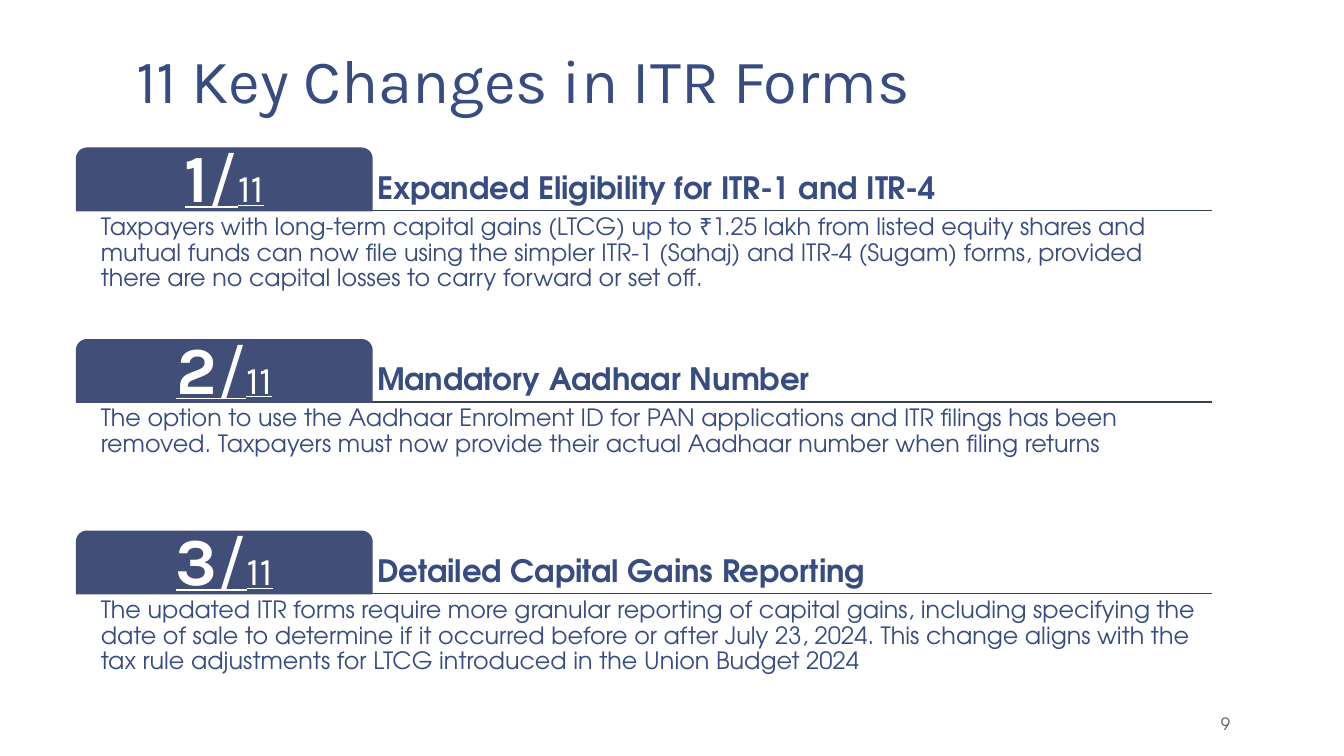
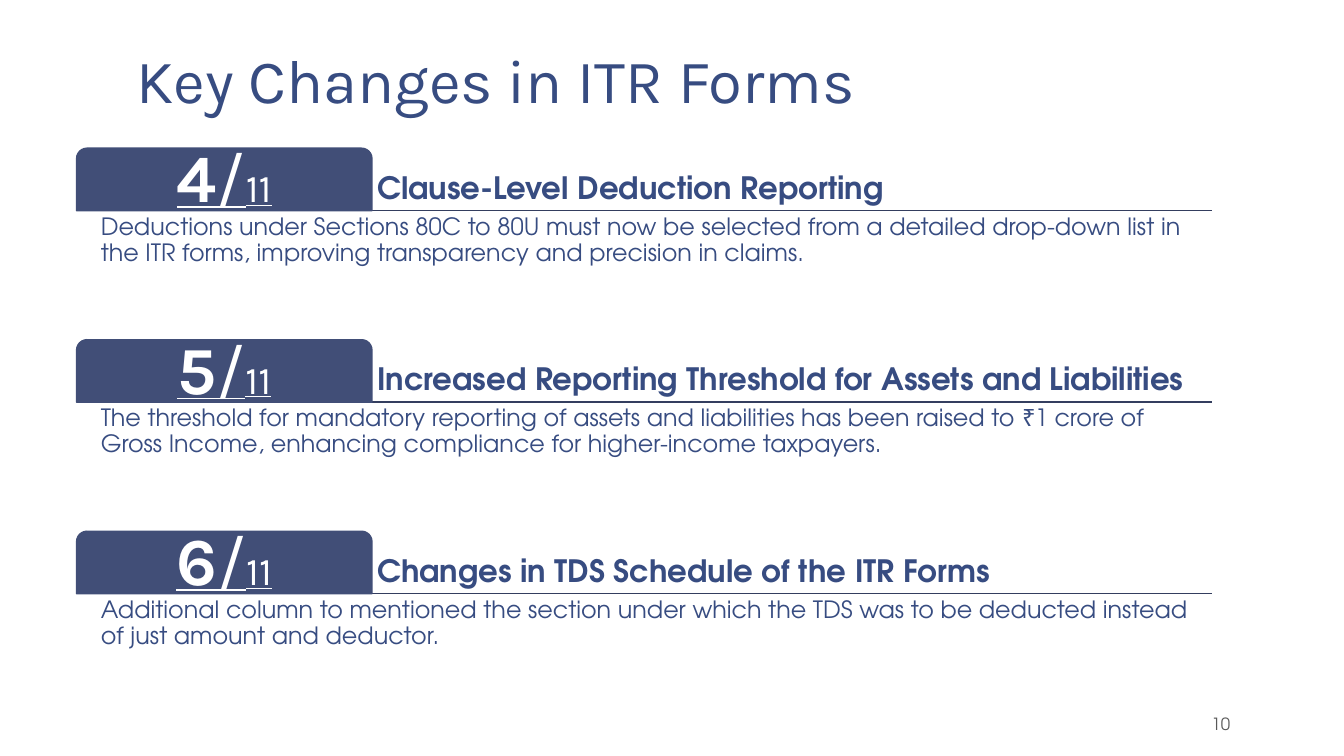
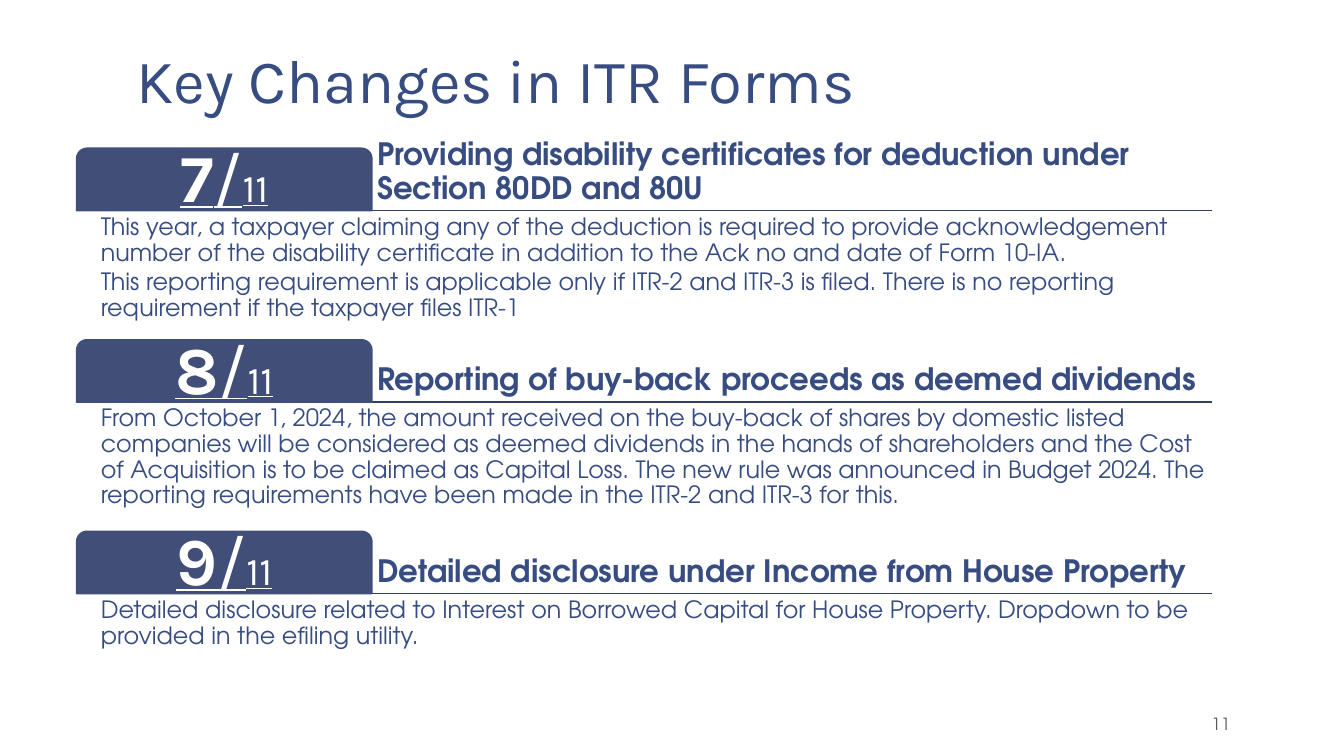
"""Build three slides listing key changes in the ITR forms."""
from dataclasses import dataclass

import pptx
import pptx.dml.color
import pptx.enum.shapes
import pptx.enum.text
import pptx.oxml.ns
import pptx.util
from lxml import etree
from pptx.util import Inches

RGBColor = pptx.dml.color.RGBColor
Align = pptx.enum.text.PP_ALIGN
Anchor = pptx.enum.text.MSO_ANCHOR

INK = RGBColor(0x37, 0x4C, 0x81)
TAB_FILL = RGBColor(0x41, 0x4E, 0x77)
RULE = RGBColor(0x34, 0x3E, 0x5F)
GREY = RGBColor(0x59, 0x59, 0x59)
WHITE = RGBColor(0xFF, 0xFF, 0xFF)
HEAD_FONT = "Karla"
BODY_FONT = "TeX Gyre Adventor"

LEFT, WIDTH = Inches(0.76), Inches(11.26)
TAB_WIDTH, TAB_HEIGHT = Inches(2.93), Inches(0.62)
BODY_HEIGHT = Inches(1.25)
FIRST_TOP, PITCH = Inches(1.47), Inches(1.9)
TOTAL = 11
FIRST_PAGE = 9


@dataclass
class Change:
    heading: str
    details: list[str]


@dataclass
class Page:
    title: str
    changes: list[Change]


PAGES = [
    Page("11 Key Changes in ITR Forms", [
        Change("Expanded Eligibility for ITR-1 and ITR-4", [
            "Taxpayers with long-term capital gains (LTCG) up to ₹1.25 lakh from listed equity "
            "shares and mutual funds can now file using the simpler ITR-1 (Sahaj) and ITR-4 "
            "(Sugam) forms, provided there are no capital losses to carry forward or set off."]),
        Change("Mandatory Aadhaar Number", [
            "The option to use the Aadhaar Enrolment ID for PAN applications and ITR filings has "
            "been removed. Taxpayers must now provide their actual Aadhaar number when filing "
            "returns"]),
        Change("Detailed Capital Gains Reporting", [
            "The updated ITR forms require more granular reporting of capital gains, including "
            "specifying the date of sale to determine if it occurred before or after July 23, "
            "2024. This change aligns with the tax rule adjustments for LTCG introduced in the "
            "Union Budget 2024"]),
    ]),
    Page("Key Changes in ITR Forms", [
        Change("Clause-Level Deduction Reporting", [
            "Deductions under Sections 80C to 80U must now be selected from a detailed drop-down "
            "list in the ITR forms, improving transparency and precision in claims."]),
        Change("Increased Reporting Threshold for Assets and Liabilities", [
            "The threshold for mandatory reporting of assets and liabilities has been raised to "
            "₹1 crore of Gross Income, enhancing compliance for higher-income taxpayers."]),
        Change("Changes in TDS Schedule of the ITR Forms", [
            "Additional column to mentioned the section under which the TDS was to be deducted "
            "instead of just amount and deductor."]),
    ]),
    Page("Key Changes in ITR Forms", [
        Change("Providing disability certificates for deduction under Section 80DD and 80U", [
            "This year, a taxpayer claiming any of the deduction is required to provide "
            "acknowledgement number of the disability certificate in addition to the Ack no and "
            "date of Form 10-IA.",
            "This reporting requirement is applicable only if ITR-2 and ITR-3 is filed. There is "
            "no reporting requirement if the taxpayer files ITR-1"]),
        Change("Reporting of buy-back proceeds as deemed dividends", [
            "From October 1, 2024, the amount received on the buy-back of shares by domestic "
            "listed companies will be considered as deemed dividends in the hands of shareholders "
            "and the Cost of Acquisition is to be claimed as Capital Loss. The new rule was "
            "announced in Budget 2024. The reporting requirements have been made in the ITR-2 and "
            "ITR-3 for this."]),
        Change("Detailed disclosure under Income from House Property", [
            "Detailed disclosure related to Interest on Borrowed Capital for House Property. "
            "Dropdown to be provided in the efiling utility."]),
    ]),
]


def add_run(p, text: str, *, size: float, font: str = BODY_FONT, color: RGBColor = INK,
            bold: bool = False, underline: bool = False) -> None:
    """Append a formatted run to a paragraph."""
    r = p.add_run()
    r.text = text
    r.font.size = pptx.util.Pt(size)
    r.font.name = font
    r.font.color.rgb = color
    r.font.bold = bold
    r.font.underline = underline


def set_frame(tf, anchor: Anchor, left: float, top: float, right: float, bottom: float) -> None:
    """Set wrapping, anchor and margins in inches."""
    tf.word_wrap = True
    tf.vertical_anchor = anchor
    tf.margin_left, tf.margin_top = Inches(left), Inches(top)
    tf.margin_right, tf.margin_bottom = Inches(right), Inches(bottom)


def add_text(s, box: tuple, texts: list[str], *, margins: tuple, anchor: Anchor = Anchor.TOP,
             align: Align = Align.LEFT, spacing: float = 0.9, after: float = 0,
             **font) -> None:
    """Add a text box with one paragraph for each text."""
    tf = s.shapes.add_textbox(*box).text_frame
    set_frame(tf, anchor, *margins)
    for i, text in enumerate(texts):
        p = tf.add_paragraph() if i else tf.paragraphs[0]
        p.alignment = align
        p.line_spacing = spacing
        p.space_after = pptx.util.Pt(after)
        add_run(p, text, **font)


def add_rule(s, y: int) -> None:
    """Draw the line under a heading."""
    line = s.shapes.add_connector(
        pptx.enum.shapes.MSO_CONNECTOR.STRAIGHT, LEFT, y, LEFT + WIDTH, y)
    line.line.color.rgb = RULE
    line.line.width = pptx.util.Pt(1)
    etree.SubElement(line._element.spPr, pptx.oxml.ns.qn("a:effectLst"))


def add_tab(s, top: int, number: int) -> None:
    """Draw the numbered tab."""
    sp = s.shapes.add_shape(pptx.enum.shapes.MSO_SHAPE.ROUND_2_SAME_RECTANGLE,
                            LEFT, top, TAB_WIDTH, TAB_HEIGHT)
    sp.shadow.inherit = False
    sp.fill.solid()
    sp.fill.fore_color.rgb = TAB_FILL
    sp.line.color.rgb = TAB_FILL
    sp.line.width = pptx.util.Pt(1)
    set_frame(sp.text_frame, Anchor.MIDDLE, 0.1, 0.1, 0.1, 0.1)
    p = sp.text_frame.paragraphs[0]
    p.alignment = Align.CENTER
    p.line_spacing = 0.9
    for text, size, bold in ((str(number), 48, True), ("/", 48, False), (str(TOTAL), 28, False)):
        add_run(p, text, size=size, bold=bold, font=HEAD_FONT, color=WHITE, underline=True)


def add_change(s, top: int, number: int, change: Change) -> None:
    """Draw one numbered change with its heading and details."""
    bottom = top + TAB_HEIGHT
    add_rule(s, bottom)
    add_text(s, (LEFT + TAB_WIDTH, top, WIDTH - TAB_WIDTH, TAB_HEIGHT), [change.heading],
             margins=(0.05, 0.05, 0.05, 0.05), anchor=Anchor.BOTTOM, size=22, bold=True)
    add_tab(s, top, number)
    add_text(s, (LEFT, bottom, WIDTH, BODY_HEIGHT), change.details,
             margins=(0.24, 0.04, 0.04, 0.04), after=3, size=17)


def add_page(prs, page: Page, page_number: int, first_change: int) -> None:
    """Add a slide with its title, changes and page number."""
    s = prs.slides.add_slide(prs.slide_layouts[6])
    margins = (0.13, 0.07, 0.13, 0.07)
    add_text(s, (Inches(1.22), Inches(0.08), Inches(11.11), Inches(1.53)), [page.title],
             margins=margins, anchor=Anchor.MIDDLE, spacing=0.85, size=44, font=HEAD_FONT)
    for i, change in enumerate(page.changes):
        add_change(s, FIRST_TOP + i * PITCH, first_change + i, change)
    add_text(s, (Inches(11.12), Inches(7), Inches(1.21), Inches(0.35)), [str(page_number)],
             margins=margins, anchor=Anchor.BOTTOM, align=Align.RIGHT, spacing=1.0,
             size=12, color=GREY)


def main() -> None:
    """Build and save the presentation."""
    prs = pptx.Presentation()
    prs.slide_width, prs.slide_height = Inches(13.33), Inches(7.5)
    first_change = 1
    for page_number, page in enumerate(PAGES, FIRST_PAGE):
        add_page(prs, page, page_number, first_change)
        first_change += len(page.changes)
    prs.save("out.pptx")


if __name__ == "__main__":
    main()
